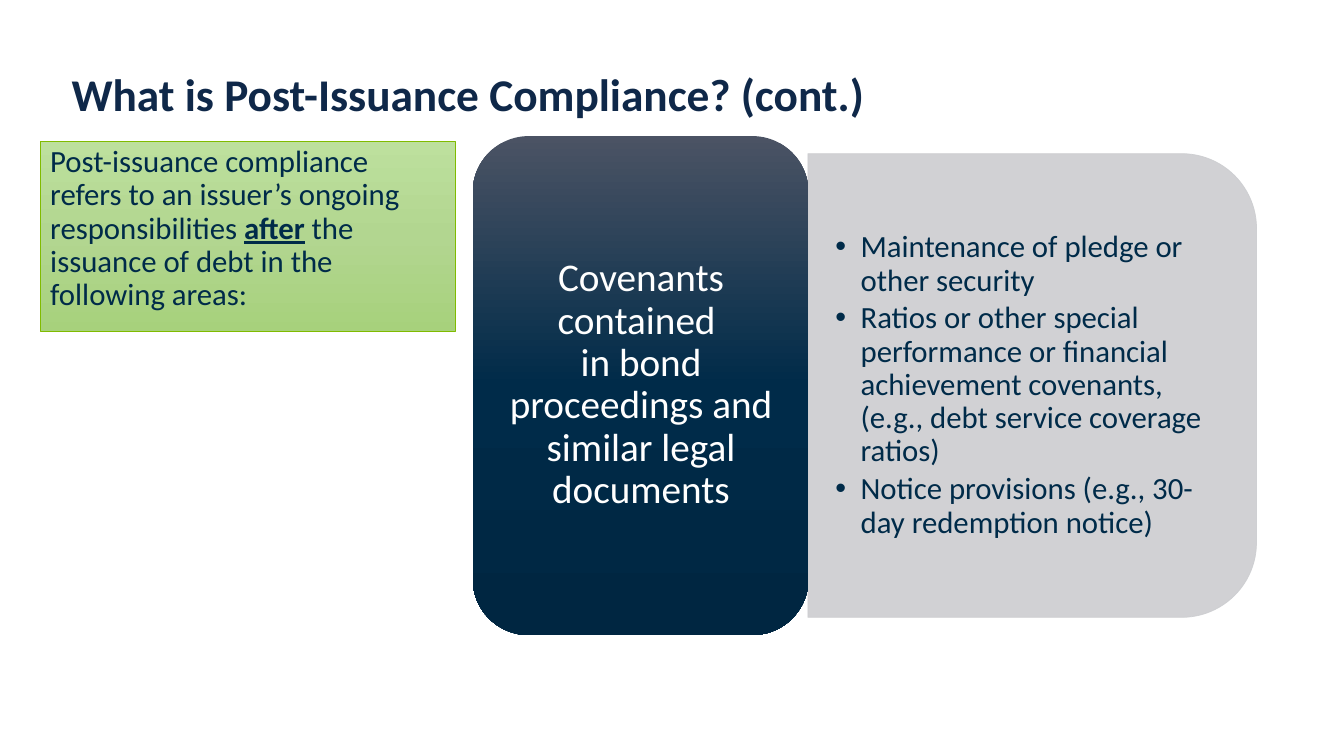
from lxml.etree import SubElement
from pptx import Presentation
from pptx.dml.color import RGBColor
from pptx.enum.shapes import MSO_SHAPE as Shape
from pptx.enum.text import MSO_ANCHOR as Anchor, MSO_AUTO_SIZE as AutoSize, PP_ALIGN as Align
from pptx.oxml.ns import qn
from pptx.util import Pt

NAVY = RGBColor(0x00, 0x2B, 0x49)
TITLE_NAVY = RGBColor(0x0F, 0x28, 0x49)
WHITE = RGBColor(0xFF, 0xFF, 0xFF)
GREY = RGBColor(0xCC, 0xCD, 0xD0)
GREEN_LINE = RGBColor(0x80, 0xBB, 0x00)
GREENS = [RGBColor(0xBD, 0xE0, 0x9D), RGBColor(0xB2, 0xD6, 0x90), RGBColor(0xA7, 0xD1, 0x7C)]
BLUES = [RGBColor(0x4B, 0x53, 0x64), NAVY, RGBColor(0x00, 0x26, 0x41)]


def fill_gradient(shape, colours):
    shape.fill.gradient()
    gradient = shape._element.spPr.find(qn("a:gradFill"))
    stops = gradient.find(qn("a:gsLst"))
    for stop in list(stops):
        stops.remove(stop)
    for index, colour in enumerate(colours):
        stop = SubElement(stops, qn("a:gs"), pos=str(index * 50000))
        SubElement(stop, qn("a:srgbClr"), val=str(colour))
    gradient.find(qn("a:lin")).set("ang", "5400000")


def write(frame, paragraphs, size, colour, align, after, margins, anchor, bullet=False):
    layout = {"word_wrap": True, "auto_size": AutoSize.NONE, "vertical_anchor": anchor}
    layout.update(zip(("margin_left", "margin_right", "margin_top", "margin_bottom"),
                      (Pt(margin) for margin in margins)))
    for name, value in layout.items():
        setattr(frame, name, value)
    for index, runs in enumerate(paragraphs):
        para = frame.add_paragraph() if index else frame.paragraphs[0]
        spacing = {"alignment": align, "line_spacing": 0.9, "space_before": Pt(0), "space_after": Pt(after)}
        for name, value in spacing.items():
            setattr(para, name, value)
        if bullet:
            properties = para._p.get_or_add_pPr()
            properties.set("marL", "228600")
            properties.set("indent", "-228600")
            SubElement(properties, qn("a:buFont"), typeface="Arial")
            SubElement(properties, qn("a:buChar"), char="•")
        for text, extra in runs:
            span = para.add_run()
            span.text = text
            for name, value in {"name": "Calibri", "size": Pt(size), **extra}.items():
                setattr(span.font, name, value)
            span.font.color.rgb = colour


deck = Presentation()
deck.slide_width, deck.slide_height = Pt(960), Pt(540)
page = deck.slides.add_slide(deck.slide_layouts[5])
shapes = page.shapes

title = shapes.title
place = {"left": Pt(43.9), "top": Pt(51.1), "width": Pt(620), "height": Pt(36)}
for name, value in place.items():
    setattr(title, name, value)
write(title.text_frame, [[("What is Post-Issuance Compliance? (cont.)", {"bold": True})]],
      32.4, TITLE_NAVY, Align.LEFT, 0, (7.2, 7.2, 3.6, 3.6), Anchor.MIDDLE)

intro = shapes.add_shape(Shape.RECTANGLE, Pt(28.8), Pt(100.8), Pt(296.6), Pt(136))
intro.shadow.inherit = False
fill_gradient(intro, GREENS)
intro.line.color.rgb = GREEN_LINE
intro.line.width = Pt(0.5)
write(intro.text_frame,
      [[("Post-issuance compliance refers to an issuer’s ongoing responsibilities ", {}),
        ("after", {"bold": True, "underline": True}),
        (" the issuance of debt in the following areas:", {})]],
      22, NAVY, Align.LEFT, 7.7, (7.2, 7.2, 3.6, 3.6), Anchor.TOP)

panel = shapes.add_shape(Shape.ROUND_2_SAME_RECTANGLE, Pt(571.7), Pt(115.2), Pt(331.2), Pt(320.4))
panel.rotation = 90
panel.shadow.inherit = False
panel.fill.solid()
panel.fill.fore_color.rgb = GREY
panel.line.color.rgb = GREY
panel.line.width = Pt(0.5)
for colour in panel._element.spPr.iter(qn("a:srgbClr")):
    SubElement(colour, qn("a:alpha"), val="90000")

duties = [
    "Maintenance of pledge or other security",
    "Ratios or other special performance or financial achievement covenants, "
    "(e.g., debt service coverage ratios)",
    "Notice provisions (e.g., 30-day redemption notice)",
]
duties_box = shapes.add_textbox(Pt(577.4), Pt(125.3), Pt(305.3), Pt(300.2))
write(duties_box.text_frame, [[(duty, {})] for duty in duties],
      22, NAVY, Align.LEFT, 3.3, (19.4, 19.4, 10.1, 10.1), Anchor.MIDDLE, bullet=True)

tile = shapes.add_shape(Shape.ROUNDED_RECTANGLE, Pt(337.7), Pt(97.2), Pt(239.8), Pt(356.4))
tile.shadow.inherit = False
fill_gradient(tile, BLUES)
tile.line.fill.background()

covenants_box = shapes.add_textbox(Pt(349.9), Pt(108.7), Pt(216), Pt(332.6))
write(covenants_box.text_frame, [[("Covenants contained ", {})]],
      28, WHITE, Align.CENTER, 9.8, (8.6, 8.6, 4.3, 4.3), Anchor.MIDDLE)
covenants = covenants_box.text_frame.paragraphs[0]
covenants.text = "Covenants contained \vin bond proceedings and similar legal documents"
for span in covenants.runs:
    for name, value in {"name": "Calibri", "size": Pt(28)}.items():
        setattr(span.font, name, value)
    span.font.color.rgb = WHITE

deck.save("out.pptx")
